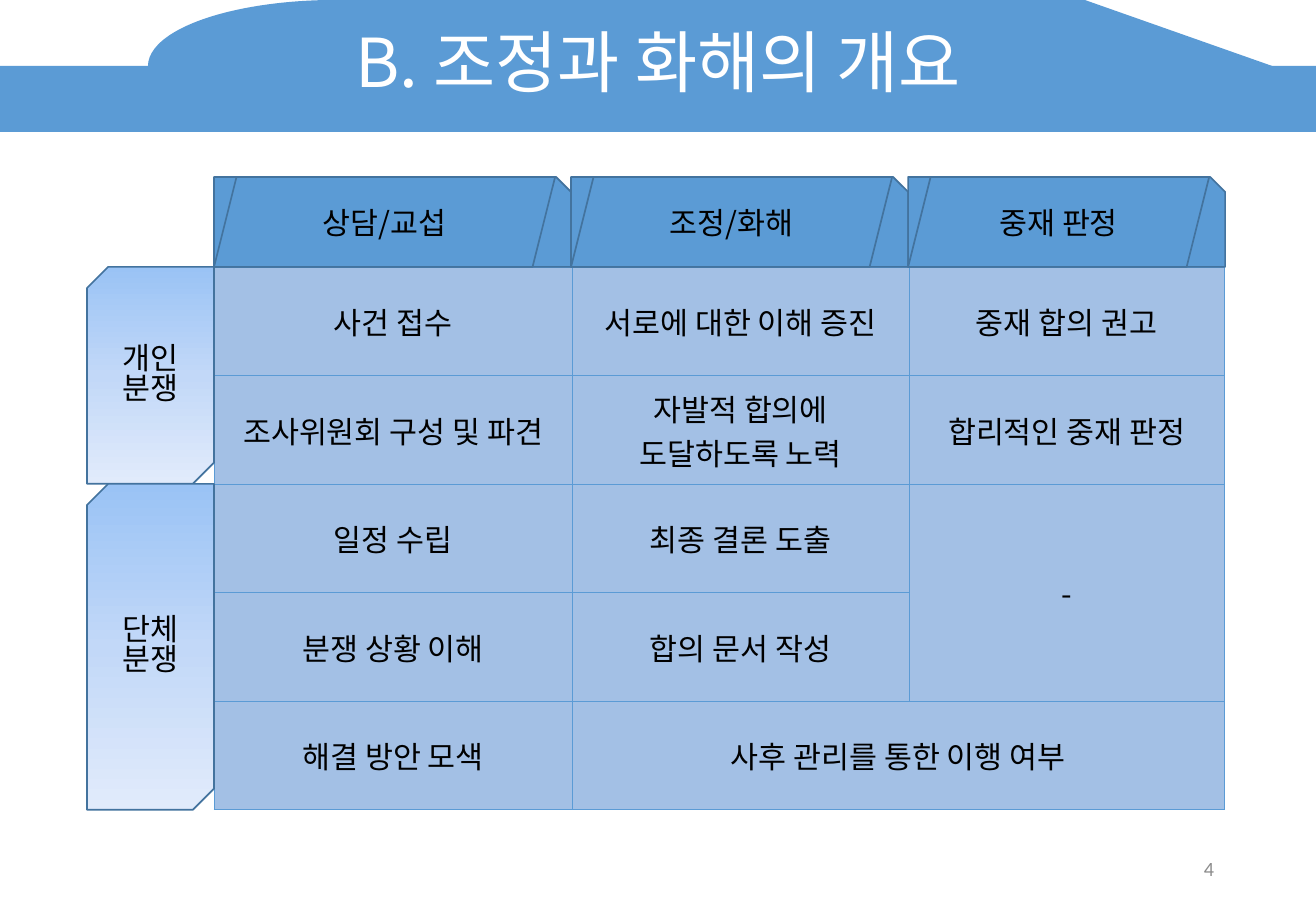
from copy import deepcopy

from lxml.etree import SubElement
from pptx import Presentation
from pptx.dml.color import RGBColor
from pptx.enum.shapes import MSO_SHAPE as SHAPE
from pptx.enum.text import MSO_ANCHOR as ANCHOR, MSO_AUTO_SIZE as AUTO, PP_ALIGN as ALIGN
from pptx.oxml.ns import qn
from pptx.util import Inches, Pt

COLORS = {
    "blue": "5B9BD5", "edge": "43739E", "cell": "A3C0E5",
    "white": "FFFFFF", "black": "000000", "gray": "8C8C8C",
    "top": "9AC3F5", "middle": "C2D8F8", "bottom": "E1EBFB",
}
KOREAN = "Noto Sans CJK KR"


def rgb(name):
    return RGBColor.from_string(COLORS[name])


def px(*lengths):
    return [round(n * 914400 / 121.5) for n in lengths]


class Deck:
    def __init__(self):
        self.prs = Presentation()
        self.prs.slide_width, self.prs.slide_height = Inches(10.83), Inches(7.5)
        self.slide = self.prs.slides.add_slide(self.prs.slide_layouts[5])

    def set_text(self, tf, text, size=18, color="black", font=KOREAN,
                 align=ALIGN.CENTER, spacing=None):
        tf.text = text
        for p in tf.paragraphs:
            p.alignment = align
            p.line_spacing = spacing
            for r in p.runs:
                for key, value in {"size": Pt(size), "name": font, "bold": False}.items():
                    setattr(r.font, key, value)
                r.font.color.rgb = rgb(color)
                SubElement(r._r.get_or_add_rPr(), qn("a:ea")).set("typeface", font)

    def frame(self, tf):
        for key, value in {"word_wrap": True, "auto_size": AUTO.NONE,
                           "vertical_anchor": ANCHOR.MIDDLE}.items():
            setattr(tf, key, value)
        return tf

    def title(self, text, box):
        s = self.slide.shapes.title
        s.left, s.top, s.width, s.height = px(*box)
        self.slide.shapes._spTree.append(s._element)
        self.set_text(self.frame(s.text_frame), text, 40, "white", spacing=0.9)

    def text(self, text, box, **style):
        s = self.slide.shapes.add_textbox(*px(*box))
        self.set_text(self.frame(s.text_frame), text, **style)

    def shape(self, kind, box, text="", line=None, gradient=(), flip=False, spacing=None):
        s = self.slide.shapes.add_shape(kind, *px(*box))
        s.shadow.inherit = False
        if gradient:
            self.shade(s, gradient)
        else:
            s.fill.solid()
            s.fill.fore_color.rgb = rgb("blue")
        if line:
            s.line.color.rgb = rgb(line)
            s.line.width = Pt(1)
        else:
            s.line.fill.background()
        if flip:
            s._element.spPr.xfrm.set("flipH", "1")
        if text:
            self.set_text(self.frame(s.text_frame), text, spacing=spacing)

    def shade(self, s, names):
        s.fill.gradient()
        s.fill.gradient_angle = 270
        stops = s._element.spPr.find(".//" + qn("a:gsLst"))
        stops.insert(1, deepcopy(stops[0]))
        for i, (stop, name) in enumerate(zip(s.fill.gradient_stops, names)):
            stop.position = i / (len(names) - 1)
            stop.color.rgb = rgb(name)

    def table(self, rows, box, widths, merges):
        table = self.slide.shapes.add_table(len(rows), len(widths), *px(*box)).table
        table.first_row = table.horz_banding = False
        for col, width in zip(table.columns, px(*widths)):
            col.width = width
        for i, row in enumerate(rows):
            for j, text in enumerate(row):
                cell = table.cell(i, j)
                self.borders(cell)
                cell.fill.solid()
                cell.fill.fore_color.rgb = rgb("cell")
                cell.vertical_anchor = ANCHOR.MIDDLE
                self.set_text(cell.text_frame, text)
        for first, last in merges:
            table.cell(*first).merge(table.cell(*last))

    def borders(self, cell):
        tcPr = cell._tc.get_or_add_tcPr()
        for side in ("lnL", "lnR", "lnT", "lnB"):
            ln = SubElement(tcPr, qn("a:" + side), w=str(Pt(0.5)))
            fill = SubElement(ln, qn("a:solidFill"))
            SubElement(fill, qn("a:srgbClr"), val=COLORS["blue"])


def main():
    deck = Deck()

    # Title banner
    deck.shape(SHAPE.RECTANGLE, (0, 66, 1316, 66))
    deck.shape(SHAPE.FLOWCHART_DISPLAY, (148, 0, 1124, 132), flip=True)
    deck.title("B. 조정과 화해의 개요", (0, 0, 1316, 132))

    # Table of steps
    steps = [
        ("사건 접수", "서로에 대한 이해 증진", "중재 합의 권고"),
        ("조사위원회 구성 및 파견", "자발적 합의에\v도달하도록 노력", "합리적인 중재 판정"),
        ("일정 수립", "최종 결론 도출", "-"),
        ("분쟁 상황 이해", "합의 문서 작성", ""),
        ("해결 방안 모색", "사후 관리를 통한 이행 여부", ""),
    ]
    deck.table(steps, (214, 267, 1010, 543), (358, 337, 315),
               [((2, 2), (3, 2)), ((4, 1), (4, 2))])

    # Page number
    deck.text("4", (930, 844, 296, 49), size=12, color="gray",
              font="Calibri", align=ALIGN.RIGHT)

    # Column headers
    left = 214
    for text, width in (("상담/교섭", 357), ("조정/화해", 337), ("중재 판정", 317)):
        deck.shape(SHAPE.SNIP_1_RECTANGLE, (left, 177, width, 90), line="edge")
        deck.shape(SHAPE.PARALLELOGRAM, (left, 177, width - 16, 90), text, line="edge")
        left += width

    # Row group tabs
    top = 267
    for text, height in (("개인분쟁", 217), ("단체분쟁", 326)):
        deck.shape(SHAPE.SNIP_2_DIAG_RECTANGLE, (87, top, 127, height), text, line="edge",
                   gradient=("top", "middle", "bottom"), flip=True, spacing=0.82)
        top += height

    deck.prs.save("out.pptx")


if __name__ == "__main__":
    main()
